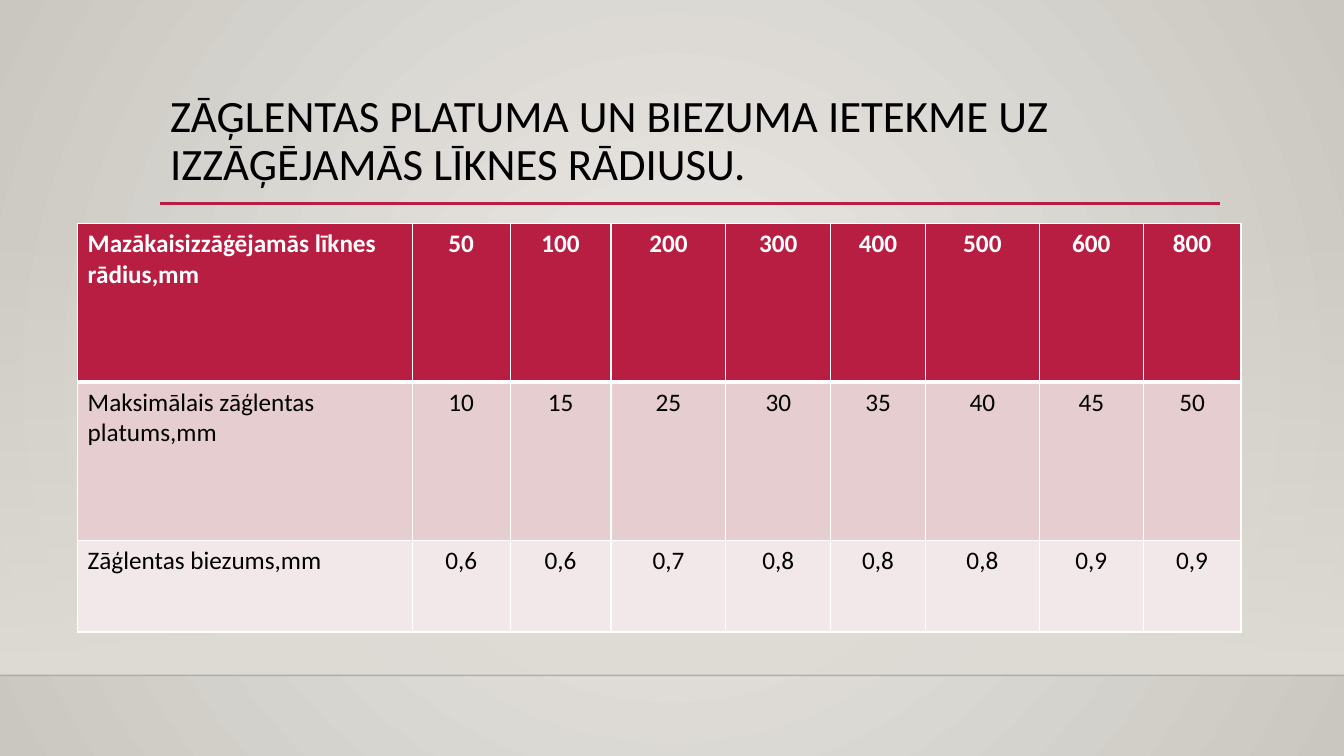
from lxml import etree
from pptx import Presentation
from pptx.dml.color import RGBColor
from pptx.enum.shapes import MSO_CONNECTOR, MSO_SHAPE
from pptx.enum.text import MSO_ANCHOR, PP_ALIGN
from pptx.oxml.ns import qn
from pptx.util import Inches, Pt

STRAIGHT = MSO_CONNECTOR.STRAIGHT
RECTANGLE = MSO_SHAPE.RECTANGLE
TOP = MSO_ANCHOR.TOP
LEFT, CENTER = PP_ALIGN.LEFT, PP_ALIGN.CENTER

FONT = "Calibri"
COLORS = {
    "glow": "ECEAE7", "edge": "CAC7C1", "wall": "DFDBD5", "floor": "000001",
    "accent": "B71E42", "width": "E6CDCF", "thickness": "F3E8E9",
    "black": "000000", "white": "FFFFFF",
}
TITLE = "ZĀĢLENTAS PLATUMA UN BIEZUMA IETEKME UZ IZZĀĢĒJAMĀS LĪKNES RĀDIUSU."
BLADE_ROWS = [
    ("Mazākaisizzāģējamās līknes rādius,mm", "50", "100", "200", "300", "400", "500", "600", "800"),
    ("Maksimālais zāģlentas platums,mm", "10", "15", "25", "30", "35", "40", "45", "50"),
    ("Zāģlentas biezums,mm", "0,6", "0,6", "0,7", "0,8", "0,8", "0,8", "0,9", "0,9"),
]
ROW_FILLS = ("accent", "width", "thickness")
COLUMN_WIDTHS = (3.32, 0.97, 1, 1.14, 1.04, 0.94, 1.13, 1.03, 0.97)
ROW_HEIGHTS = (1.57, 1.57, 0.91)
SLIDE_W, SLIDE_H = 13.33, 7.5
WALL_TOP, FLOOR_Y = 2.21, 6.7
TITLE_LEFT, TITLE_TOP, TITLE_W, TITLE_H = 1.59, 0.88, 10.5, 1.15
RULE_Y, RULE_END = 2.02, 12.1
TABLE_LEFT, TABLE_TOP = 0.77, 2.22


def rgb(name):
    return RGBColor.from_string(COLORS[name])


def add_child(parent, tag, **attributes):
    return etree.SubElement(parent, qn(tag), {key: str(value) for key, value in attributes.items()})


def set_gradient(fill, start, end):
    fill.gradient()
    for stop, name in zip(fill.gradient_stops, (start, end)):
        stop.color.rgb = rgb(name)


def add_background(slide):
    fill = slide.background.fill
    set_gradient(fill, "glow", "edge")
    linear = slide.background._cSld.find(".//" + qn("a:lin"))
    gradient = linear.getparent()
    gradient.remove(linear)
    circle = add_child(gradient, "a:path", path="circle")
    add_child(circle, "a:fillToRect", l=50000, t=50000, r=50000, b=50000)


def add_wall(slide):
    wall = slide.shapes.add_shape(
        RECTANGLE, 0, Inches(WALL_TOP), Inches(SLIDE_W), Inches(FLOOR_Y - WALL_TOP))
    wall.shadow.inherit = False
    wall.line.fill.background()
    set_gradient(wall.fill, "wall", "wall")
    wall.fill.gradient_angle = 270
    add_child(wall._element.spPr.find(".//" + qn("a:srgbClr")), "a:alpha", val=0)


def add_rule(slide, left, right, y, color, width, opacity=100):
    rule = slide.shapes.add_connector(STRAIGHT, Inches(left), Inches(y), Inches(right), Inches(y))
    rule.line.color.rgb = rgb(color)
    rule.line.width = Pt(width)
    if opacity < 100:
        add_child(rule._element.spPr.find(".//" + qn("a:srgbClr")), "a:alpha", val=opacity * 1000)
    add_child(rule._element.spPr, "a:effectLst")


def write(frame, text, size, color, align=LEFT, bold=False):
    paragraph = frame.paragraphs[0]
    paragraph.alignment = align
    run = paragraph.add_run()
    run.text = text
    run.font.name = FONT
    run.font.size = Pt(size)
    run.font.bold = bold
    run.font.color.rgb = rgb(color)
    return paragraph


def add_title(slide):
    frame = slide.shapes.add_textbox(
        Inches(TITLE_LEFT), Inches(TITLE_TOP), Inches(TITLE_W), Inches(TITLE_H)).text_frame
    frame.word_wrap = True
    frame.vertical_anchor = TOP
    write(frame, TITLE, 32, "black").line_spacing = 0.9


def add_borders(cell, top, bottom):
    properties = cell._tc.get_or_add_tcPr()
    for side, width in (("L", 1), ("R", 1), ("T", top), ("B", bottom)):
        border = add_child(properties, "a:ln" + side, w=Pt(width))
        add_child(add_child(border, "a:solidFill"), "a:srgbClr", val=COLORS["white"])


def add_blade_table(slide):
    table = slide.shapes.add_table(
        len(ROW_HEIGHTS), len(COLUMN_WIDTHS), Inches(TABLE_LEFT), Inches(TABLE_TOP),
        Inches(sum(COLUMN_WIDTHS)), Inches(sum(ROW_HEIGHTS))).table
    for column, width in zip(table.columns, COLUMN_WIDTHS):
        column.width = Inches(width)
    for r, (row, height) in enumerate(zip(table.rows, ROW_HEIGHTS)):
        row.height = Inches(height)
        header = r == 0
        for c, text in enumerate(BLADE_ROWS[r]):
            cell = table.cell(r, c)
            add_borders(cell, 3 if r == 1 else 1, 3 if header else 1)
            cell.fill.solid()
            cell.fill.fore_color.rgb = rgb(ROW_FILLS[r])
            write(cell.text_frame, text, 18, "white" if header else "black",
                  CENTER if c else LEFT, header)


def main():
    deck = Presentation()
    deck.slide_width, deck.slide_height = Inches(SLIDE_W), Inches(SLIDE_H)
    slide = deck.slides.add_slide(deck.slide_layouts[6])
    add_background(slide)
    add_wall(slide)
    add_rule(slide, 0, SLIDE_W, FLOOR_Y, "floor", 1, 20)
    add_rule(slide, TITLE_LEFT, RULE_END, RULE_Y, "accent", 2.5)
    add_title(slide)
    add_blade_table(slide)
    deck.save("out.pptx")


if __name__ == "__main__":
    main()
